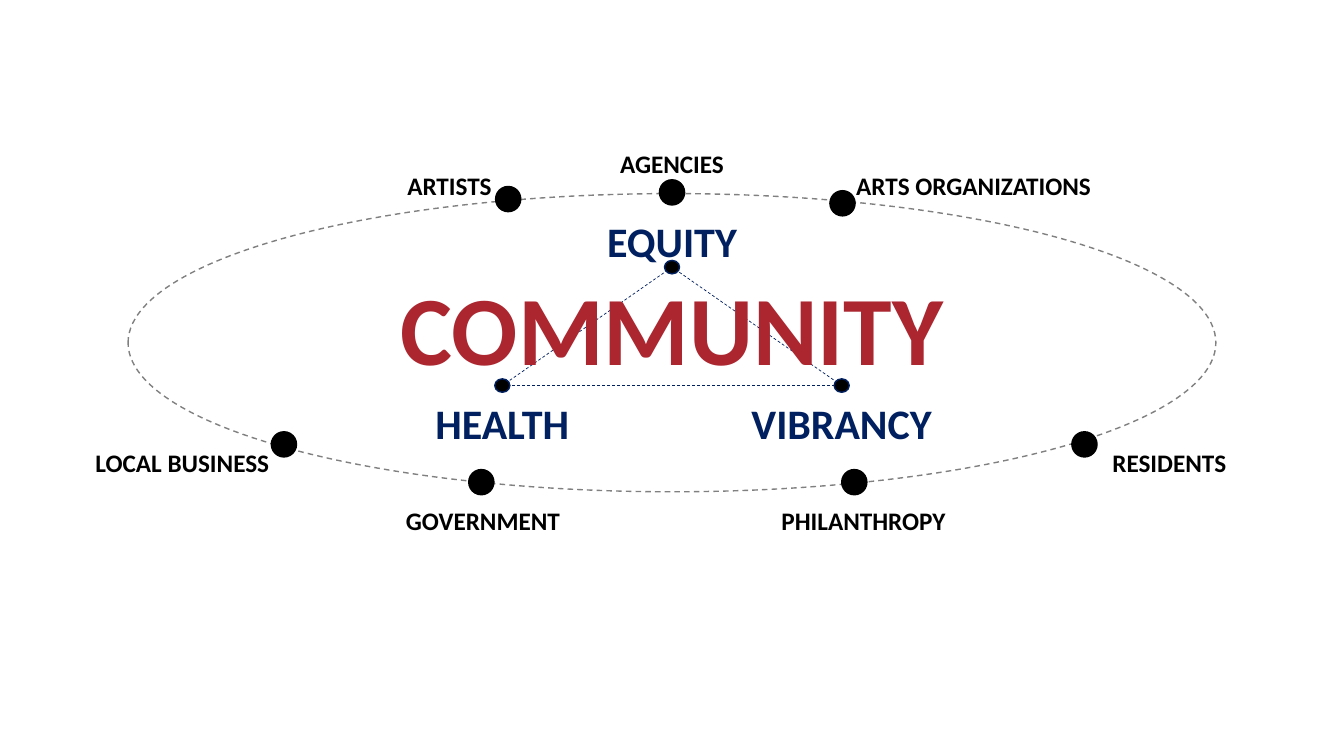
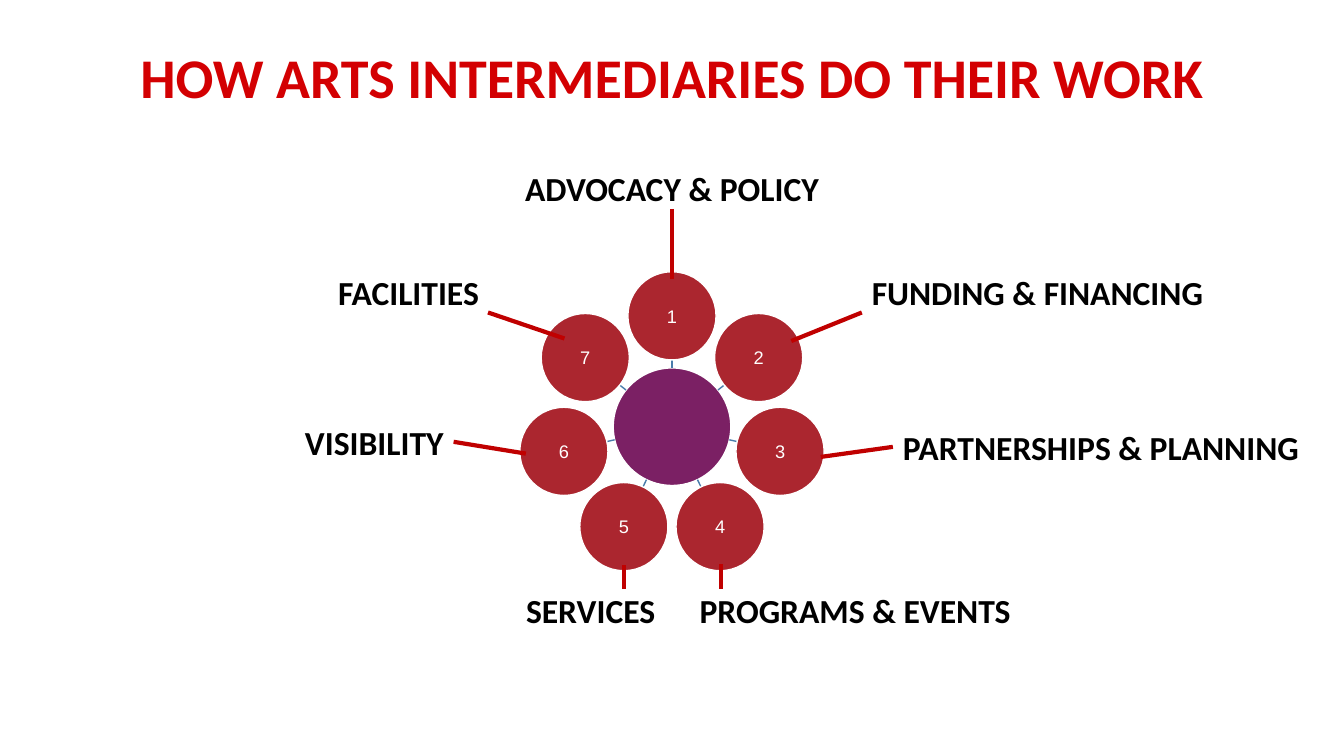
import math

import lxml.etree
import pptx
import pptx.dml.color
import pptx.enum.dml
import pptx.enum.shapes
import pptx.enum.text
import pptx.oxml.ns
import pptx.util

COLORS = {
    "black": "000000", "white": "FFFFFF", "grey": "808080", "navy": "002060",
    "crimson": "AB262F", "title": "D30002", "leader": "C00000",
    "purple": "7B2064", "spoke": "497CAB",
}
COLUMNS, ROWS = 160, 90  # square cells, a twelfth of an inch
ALIGN = pptx.enum.text.PP_ALIGN
TOP, LEFT, BOTTOM, RIGHT = range(4)  # connection sites of a rectangle


class Board:
    """Style and current slide; positions are columns and rows of the grid."""

    heading_font = "Calibri"
    number_font = "Arial"
    line_rows = 0.205  # rows taken by one line of text, per point of size

    def __init__(self):
        self.presentation = pptx.Presentation()
        self.presentation.slide_width = pptx.util.Inches(13.33)
        self.presentation.slide_height = pptx.util.Inches(7.5)
        self.slide = None

    def new_slide(self):
        self.slide = self.presentation.slides.add_slide(
            self.presentation.slide_layouts[6])

    def across(self, columns):
        return round(self.presentation.slide_width * columns / COLUMNS)

    def down(self, rows):
        return round(self.presentation.slide_height * rows / ROWS)

    def box(self, left, top, width, height):
        return (self.across(left), self.down(top),
                self.across(width), self.down(height))

    @staticmethod
    def color(name):
        return pptx.dml.color.RGBColor.from_string(COLORS[name])

    def outline(self, line, color, weight, dashed=False):
        line.color.rgb = self.color(color)
        line.width = pptx.util.Pt(weight)
        if dashed:
            line.dash_style = pptx.enum.dml.MSO_LINE.DASH

    def set_text(self, shape, words, size, color, align, font, bold):
        frame = shape.text_frame
        frame.word_wrap = True
        frame.vertical_anchor = pptx.enum.text.MSO_ANCHOR.MIDDLE
        frame.margin_top = frame.margin_bottom = 0
        paragraph = frame.paragraphs[0]
        paragraph.alignment = align
        run = paragraph.add_run()
        run.text = words
        run.font.name = font
        run.font.size = pptx.util.Pt(size)
        run.font.bold = bold
        run.font.color.rgb = self.color(color)

    def label(self, words, left, middle, width, size, color="black",
              align=ALIGN.CENTER):
        """One bold line, vertically centred on the row `middle`."""
        height = size * self.line_rows
        shape = self.slide.shapes.add_textbox(
            *self.box(left, middle - height / 2, width, height))
        self.set_text(shape, words, size, color, align, self.heading_font,
                      True)
        return shape

    def banner(self, words, middle, size, color):
        self.label(words, 0, middle, COLUMNS, size, color)

    def ellipse(self, center, width, height, fill, line, dashed=False):
        column, row = center
        shape = self.slide.shapes.add_shape(
            pptx.enum.shapes.MSO_SHAPE.OVAL,
            *self.box(column - width / 2, row - height / 2, width, height))
        shape.shadow.inherit = False
        if fill:
            shape.fill.solid()
            shape.fill.fore_color.rgb = self.color(fill)
        else:
            shape.fill.background()
        self.outline(shape.line, line, 1, dashed)
        return shape

    def numbered_circle(self, number, center, diameter):
        circle = self.ellipse(center, diameter, diameter, "crimson", "white")
        circle.text_frame.margin_left = circle.text_frame.margin_right = 0
        self.set_text(circle, str(number), 13, "white", ALIGN.CENTER,
                      self.number_font, False)

    def connect(self, start, end, color, weight, dashed=False):
        connector = self.slide.shapes.add_connector(
            pptx.enum.shapes.MSO_CONNECTOR.STRAIGHT,
            self.across(start[0]), self.down(start[1]),
            self.across(end[0]), self.down(end[1]))
        self.outline(connector.line, color, weight, dashed)
        lxml.etree.SubElement(connector._element.spPr,
                              pptx.oxml.ns.qn("a:effectLst"))
        return connector


def community_slide(board):
    board.new_slide()

    # Orbit of partners: name, alignment, label centre, dot centre
    board.ellipse((80, 40.8), 129.5, 35.5, None, "grey", dashed=True)
    label_width, dot_size = 31.4, 3
    partners = [
        ("AGENCIES", ALIGN.CENTER, (80, 19.4), (80, 22.9)),
        ("ARTS ORGANIZATIONS", ALIGN.CENTER, (115.9, 22.1), (100.3, 24.2)),
        ("ARTISTS", ALIGN.RIGHT, (44, 22.1), (60.5, 23.7)),
        ("GOVERNMENT", ALIGN.CENTER, (57.5, 61.9), (57.3, 57.4)),
        ("LOCAL BUSINESS", ALIGN.CENTER, (21.7, 55), (33.8, 52.9)),
        ("RESIDENTS", ALIGN.CENTER, (139.2, 55), (129.1, 52.9)),
        ("PHILANTHROPY", ALIGN.CENTER, (102.8, 61.9), (101.7, 57.4)),
    ]
    for name, align, (column, row), dot in partners:
        board.label(name, column - label_width / 2, row, label_width, 18,
                    align=align)
        board.ellipse(dot, dot_size, dot_size, "black", "black")

    # Triangle of goals: name, corner, row of the label
    goals = [
        ("HEALTH", (59.8, 45.9), 50.3),
        ("VIBRANCY", (100.2, 45.9), 50.3),
        ("EQUITY", (80, 31.8), 28.7),
    ]
    goal_width = 40
    corners = [corner for _, corner, _ in goals]
    for start, end in zip(corners, corners[1:] + corners[:1]):
        board.connect(start, end, "navy", 0.5, dashed=True)
    for name, corner, row in goals:
        board.ellipse(corner, 1.8, 1.6, "black", "navy")
        board.label(name, corner[0] - goal_width / 2, row, goal_width, 30,
                    "navy")

    board.banner("COMMUNITY", 38.9, 70, "crimson")


def intermediaries_slide(board):
    board.new_slide()
    board.banner("HOW ARTS INTERMEDIARIES DO THEIR WORK", 9.1, 40, "title")

    # Hub with seven numbered circles, clockwise from the top
    hub, hub_size, circle_size, ring_radius = (80, 50.8), 14, 10.5, 13.2
    circle_count = 7

    def around(angle, radius):
        return (hub[0] + radius * math.sin(angle),
                hub[1] - radius * math.cos(angle))

    board.ellipse(hub, hub_size, hub_size, "purple", "white")
    for index in range(circle_count):
        angle = math.tau * index / circle_count
        board.connect(around(angle, hub_size / 2),
                      around(angle, ring_radius - circle_size / 2),
                      "spoke", 1)
        board.numbered_circle(index + 1, around(angle, ring_radius),
                              circle_size)

    # Callouts: words, alignment, left, middle, width, leader, joined side
    callouts = [
        ("ADVOCACY & POLICY", ALIGN.CENTER, 54.8, 22.4, 50.4,
         (80, 24.8), (80, 33.2), BOTTOM),
        ("FUNDING & FINANCING", ALIGN.LEFT, 102.6, 34.8, 47.6,
         (102.6, 37.2), (94.2, 40.6), None),
        ("PARTNERSHIPS & PLANNING", ALIGN.LEFT, 106.3, 53.2, 51,
         (106.3, 53.2), (97.7, 54.4), LEFT),
        ("PROGRAMS & EVENTS", ALIGN.LEFT, 82.1, 72.6, 47.6,
         (85.8, 70.1), (85.8, 67.1), None),
        ("SERVICES", ALIGN.RIGHT, 32.2, 72.6, 47,
         (74.3, 70.1), (74.3, 67.3), None),
        ("VISIBILITY", ALIGN.RIGHT, 5, 52.6, 49,
         (54, 52.6), (62.6, 54), RIGHT),
        ("FACILITIES", ALIGN.RIGHT, 13.7, 34.8, 44.5,
         (58.1, 37.2), (67.2, 40.3), None),
    ]
    for words, align, left, middle, width, start, end, side in callouts:
        label = board.label(words, left, middle, width, 24, align=align)
        leader = board.connect(start, end, "leader", 3)
        if side is not None:
            leader.begin_connect(label, side)


def main():
    board = Board()
    community_slide(board)
    intermediaries_slide(board)
    board.presentation.save("out.pptx")


if __name__ == "__main__":
    main()
